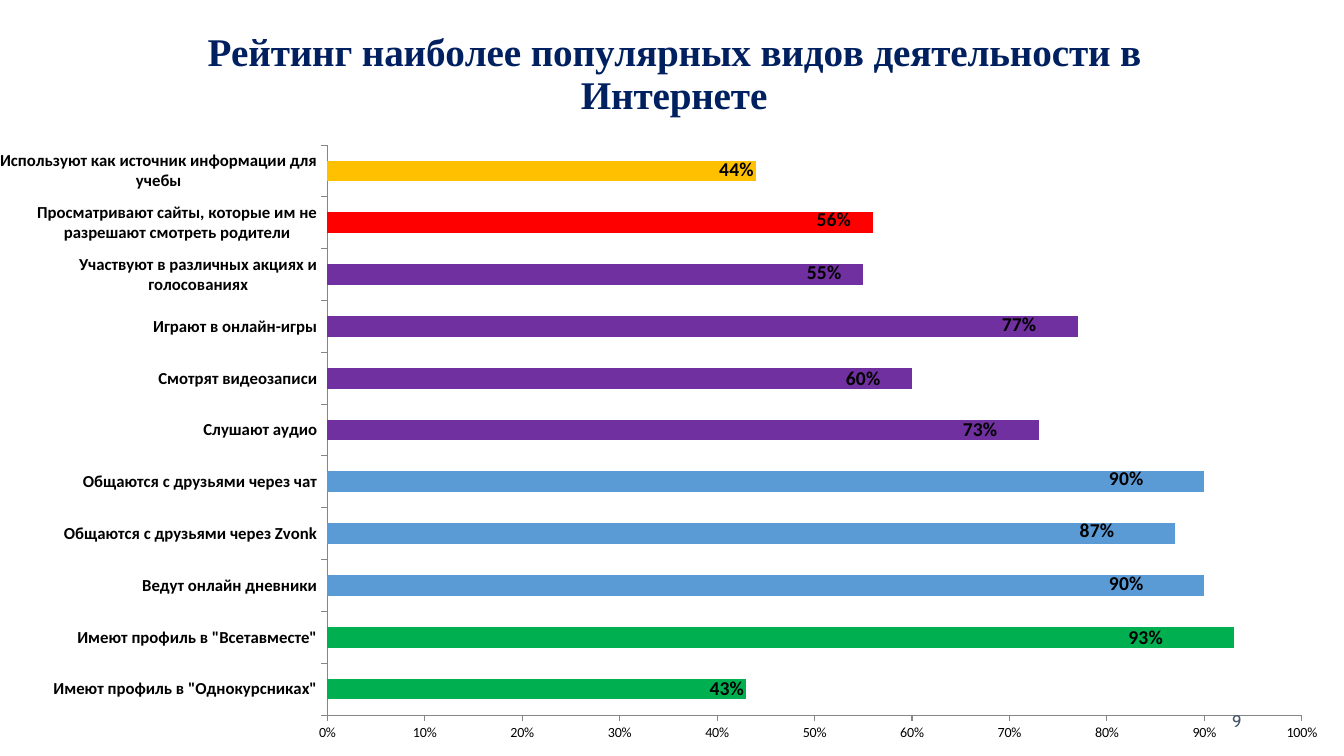
from lxml.etree import SubElement
from pptx import Presentation
from pptx.chart.data import CategoryChartData
from pptx.dml.color import RGBColor
from pptx.enum.chart import XL_CHART_TYPE, XL_LABEL_POSITION, XL_TICK_MARK
from pptx.enum.text import MSO_ANCHOR, PP_ALIGN
from pptx.oxml.ns import qn
from pptx.util import Pt

WIDE, HIGH = 960, 540
PLOT = {"x": 0.2426, "y": 0.192, "w": 0.726, "h": 0.754}
GREEN, BLUE, PURPLE = "00B050", "5B9BD5", "7030A0"
TITLE = "Рейтинг наиболее популярных видов деятельности в Интернете"
C15 = "http://schemas.microsoft.com/office/drawing/2012/chart"

# Name, share, bar colour, label centre on the value axis, label lift in points
ROWS = [
    ('Имеют профиль в "Однокурсниках"', 0.43, GREEN, 0.41, 0),
    ('Имеют профиль в "Всетавместе"', 0.93, GREEN, 0.84, 0),
    ("Ведут онлайн дневники", 0.9, BLUE, 0.82, 1.5),
    ("Общаются с друзьями через Zvonk", 0.87, BLUE, 0.79, 2),
    ("Общаются с друзьями через чат", 0.9, BLUE, 0.82, 2),
    ("Слушают аудио", 0.73, PURPLE, 0.67, 0),
    ("Смотрят видеозаписи", 0.6, PURPLE, 0.55, 0),
    ("Играют в онлайн-игры", 0.77, PURPLE, 0.71, 1.5),
    ("Участвуют в различных акциях и голосованиях", 0.55, PURPLE, 0.51, 1.5),
    ("Просматривают сайты, которые им не разрешают смотреть родители",
     0.56, "FF0000", 0.52, 2),
    ("Используют как источник информации для учебы",
     0.44, "FFC000", 0.42, 1),
]


def paint(target, shade):
    target.rgb = RGBColor.from_string(shade)


def fill(part, shade):
    part.format.fill.solid()
    paint(part.format.fill.fore_color, shade)


def style(font, size, shade, face, bold=False):
    font.size, font.name, font.bold = Pt(size), face, bold
    paint(font.color, shade)


def place(parent, index, modes, spots):
    """Give a chart part a manual layout, as shares of the chart."""
    for old in parent.findall(qn("c:layout")):
        parent.remove(old)
    layout = SubElement(parent, qn("c:layout"))
    parent.insert(index, layout)
    manual = SubElement(layout, qn("c:manualLayout"))
    for tag, value in {**modes, **spots}.items():
        SubElement(manual, qn(f"c:{tag}")).set("val", str(value))


def add_bars(slide):
    data = CategoryChartData(number_format="0%")
    data.categories = [row[0] for row in ROWS]
    data.add_series("Series 1", [row[1] for row in ROWS])
    chart = slide.shapes.add_chart(
        XL_CHART_TYPE.BAR_STACKED, 0, 0, Pt(WIDE), Pt(HIGH), data).chart
    chart.has_legend = False
    style(chart.font, 10, "000000", "Calibri")
    plot = chart.plots[0]
    plot.gap_width, plot.overlap, plot.vary_by_categories = 150, 100, False
    edges = {"xMode": "edge", "yMode": "edge"}
    place(chart._chartSpace.chart.plotArea, 0,
          {"layoutTarget": "inner", **edges}, PLOT)
    return chart


def add_title(chart):
    chart.has_title = True
    title = chart.chart_title
    title.text_frame.text = TITLE
    run = title.text_frame.paragraphs[0].runs[0]
    style(run.font, 28, "002060", "Times New Roman", True)
    place(title._element, 1, {"xMode": "edge", "yMode": "edge"},
          {"x": 0.148, "y": 0.027})


def set_axes(chart):
    for axis in (chart.category_axis, chart.value_axis):
        axis.has_major_gridlines = False
        axis.major_tick_mark = XL_TICK_MARK.OUTSIDE
        axis.format.line.width = Pt(0.75)
        paint(axis.format.line.color, "868686")
    style(chart.category_axis.tick_labels.font, 12, "000000", "Calibri", True)
    scale = chart.value_axis
    scale.minimum_scale, scale.maximum_scale, scale.major_unit = 0, 1, 0.1
    scale.tick_labels.number_format = "0%"
    scale.tick_labels.number_format_is_linked = False


def set_labels(series):
    labels = series.data_labels
    labels.show_value = True
    labels.number_format = "0%"
    labels.number_format_is_linked = False
    style(labels.font, 14, "000000", "Calibri", True)


def drop_leads(series):
    """Switch off the leader lines of moved labels."""
    node = series.data_labels._element
    for old in node.findall(qn("c:showLeaderLines")):
        node.remove(old)
    SubElement(node, qn("c:showLeaderLines")).set("val", "0")
    ext = SubElement(SubElement(node, qn("c:extLst")), qn("c:ext"),
                     nsmap={"c15": C15})
    ext.set("uri", "{CE6537A1-D6FC-4f65-9D91-7224C49458BB}")
    SubElement(ext, f"{{{C15}}}showLeaderLines").set("val", "0")


def set_points(series):
    """Colour each bar and shift its label from the middle of the bar."""
    for i, (_, share, shade, spot, lift) in enumerate(ROWS):
        point = series.points[i]
        if shade != BLUE:
            fill(point, shade)
        label = point.data_label
        style(label.font, 14, "000000", "Calibri", True)
        label.position = XL_LABEL_POSITION.CENTER
        node = series._element.xpath(f".//c:dLbl[c:idx/@val='{i}']")[0]
        place(node, 1, {}, {"x": round((spot - share / 2) * PLOT["w"], 4),
                            "y": round(-lift / HIGH, 4)})


def add_number(slide, text):
    box = slide.shapes.add_textbox(Pt(678), Pt(500.5), Pt(216), Pt(28.75))
    frame = box.text_frame
    frame.word_wrap = True
    frame.vertical_anchor = MSO_ANCHOR.MIDDLE
    frame.text = text
    line = frame.paragraphs[0]
    line.alignment = PP_ALIGN.RIGHT
    style(line.runs[0].font, 12, "44546A", "Cabin")


def main():
    deck = Presentation()
    deck.slide_width, deck.slide_height = Pt(WIDE), Pt(HIGH)
    slide = deck.slides.add_slide(deck.slide_layouts[6])
    chart = add_bars(slide)
    add_title(chart)
    set_axes(chart)
    series = chart.plots[0].series[0]
    series.invert_if_negative = False
    fill(series, BLUE)
    set_labels(series)
    set_points(series)
    drop_leads(series)
    add_number(slide, "9")
    deck.save("out.pptx")


if __name__ == "__main__":
    main()
